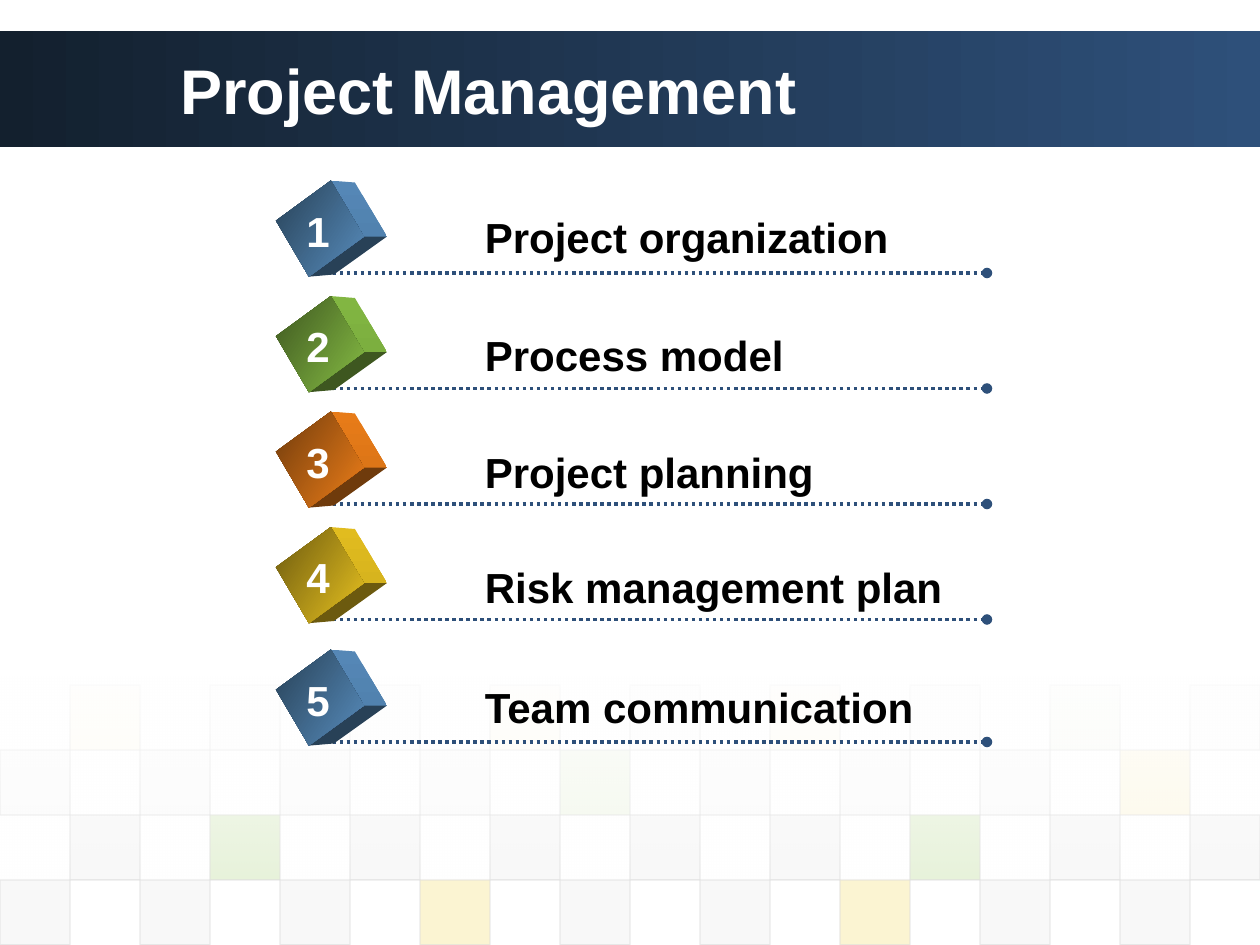
from lxml import etree
from pptx import Presentation
from pptx.dml.color import RGBColor
from pptx.enum import dml, shapes, text
from pptx.oxml import ns
from pptx.util import Pt

WHITE = RGBColor(0xFF, 0xFF, 0xFF)
BLACK = RGBColor(0, 0, 0)
NAVY = RGBColor(0x2E, 0x50, 0x7A)
DEEP_NAVY = RGBColor(0x13, 0x20, 0x2E)
BLUE = RGBColor(0x5A, 0x90, 0xC2)
GREEN = RGBColor(0x8A, 0xC2, 0x46)
ORANGE = RGBColor(0xF6, 0x83, 0x1A)
YELLOW = RGBColor(0xEF, 0xC8, 0x21)
GRAY = RGBColor(0xDD, 0xDD, 0xDD)
PALE = RGBColor(0xEA, 0xEA, 0xEA)

# Label, cube colour, rule height, label top
TOPICS = [
    ("Project organization", BLUE, 156, 117.5),
    ("Process model", GREEN, 222, 185),
    ("Project planning", ORANGE, 288, 251.5),
    ("Risk management plan", YELLOW, 354, 317.5),
    ("Team communication", BLUE, 424, 386),
]

# First column, opacity in percent, tile colours in every second column
TILE_ROWS = [
    (1, 5, [YELLOW, PALE, PALE, YELLOW, GRAY, YELLOW, PALE, GREEN, PALE]),
    (0, 10, [GRAY] * 4 + [GREEN] + [GRAY] * 3 + [YELLOW]),
    (1, 20, [GRAY, GREEN] + [GRAY] * 4 + [GREEN, GRAY, GRAY]),
    (0, 20, [GRAY] * 3 + [YELLOW, GRAY, GRAY, YELLOW, GRAY, GRAY]),
]
TILE_W, TILE_H, TILES_TOP = 40, 37.1, 391.5

# Cube corners, measured from the cube's upper left
LEFT, TOP, TOP_BACK = (0, 22.9), (31.4, 0), (45.1, 1.1)
CENTER, RIGHT = (50.3, 32), (63.4, 32)
BOTTOM, BOTTOM_BACK = (18.9, 54.9), (33.1, 53.7)
CUBE_LEFT, CUBE_RISE = 157.7, 52.8


def shade(color, factor):
    return RGBColor(*(round(part * factor) for part in color))


def set_opacity(holder, *percents):
    """Give the RGB colours inside an XML element their opacities, in order."""
    for color, percent in zip(holder.iter(ns.qn("a:srgbClr")), percents):
        alpha = etree.SubElement(color, ns.qn("a:alpha"))
        alpha.set("val", str(percent * 1000))


def fill_gradient(shape, start, end, angle):
    """Fill from start to end; the angle runs counter-clockwise."""
    shape.fill.gradient()
    shape.fill.gradient_angle = angle
    for stop, color, position in zip(shape.fill.gradient_stops, (start, end), (0, 1)):
        stop.color.rgb = color
        stop.position = position


def add_rect(slide, left, top, width, height):
    rect = slide.shapes.add_shape(shapes.MSO_SHAPE.RECTANGLE,
                                  Pt(left), Pt(top), Pt(width), Pt(height))
    rect.shadow.inherit = False
    rect.line.fill.background()
    return rect


def add_tile(slide, column, row, color, opacity):
    tile = add_rect(slide, column * TILE_W, TILES_TOP + row * TILE_H, TILE_W, TILE_H)
    tile.fill.solid()
    tile.fill.fore_color.rgb = color
    tile.line.color.rgb = GRAY
    tile.line.width = Pt(0.75)
    set_opacity(tile._element.spPr, opacity, 60)


def add_text(slide, words, left, top, width, height, size=24, color=BLACK,
             align=text.PP_ALIGN.LEFT, wrap=False):
    box = slide.shapes.add_textbox(Pt(left), Pt(top), Pt(width), Pt(height))
    frame = box.text_frame
    frame.word_wrap = wrap
    frame.vertical_anchor = text.MSO_ANCHOR.MIDDLE
    paragraph = frame.paragraphs[0]
    paragraph.alignment = align
    run = paragraph.add_run()
    run.text = words
    run.font.name = "Arial"
    run.font.size = Pt(size)
    run.font.bold = True
    run.font.color.rgb = color


def add_dotted_rule(slide, left, right, y):
    rule = slide.shapes.add_connector(shapes.MSO_CONNECTOR.STRAIGHT,
                                      Pt(left), Pt(y), Pt(right), Pt(y))
    rule.line.color.rgb = NAVY
    rule.line.width = Pt(2)
    rule.line.dash_style = dml.MSO_LINE.ROUND_DOT
    properties = rule._element.spPr
    end = etree.SubElement(properties.find(ns.qn("a:ln")), ns.qn("a:tailEnd"))
    end.set("type", "oval")
    etree.SubElement(properties, ns.qn("a:effectLst"))


def add_face(slide, corners, left, top):
    points = [(Pt(left + x), Pt(top + y)) for x, y in corners]
    builder = slide.shapes.build_freeform(*points[0])
    builder.add_line_segments(points[1:], close=True)
    face = builder.convert_to_shape()
    face.shadow.inherit = False
    face.line.fill.background()
    return face


def add_cube(slide, left, top, color):
    dark = shade(color, 0.45)
    side = add_face(slide, [TOP, TOP_BACK, RIGHT, CENTER], left, top)
    fill_gradient(side, shade(color, 0.94), shade(color, 0.9), 270)
    base = add_face(slide, [CENTER, RIGHT, BOTTOM_BACK, BOTTOM], left, top)
    base.fill.solid()
    base.fill.fore_color.rgb = dark
    front = add_face(slide, [LEFT, TOP, CENTER, BOTTOM], left, top)
    fill_gradient(front, dark, shade(color, 0.97), 327)


def add_topic(slide, number, label, color, rule_y, label_top):
    add_dotted_rule(slide, 186, 564, rule_y)
    add_cube(slide, CUBE_LEFT, rule_y - CUBE_RISE, color)
    add_text(slide, str(number), 167.8, rule_y - 42.2, 28, 36,
             color=WHITE, align=text.PP_ALIGN.CENTER)
    add_text(slide, label, 270, label_top, 280, 36, wrap=True)


def add_backdrop(slide):
    banner = add_rect(slide, 0, 18, 720, 66)
    fill_gradient(banner, DEEP_NAVY, NAVY, 0)
    for row, (first, opacity, colors) in enumerate(TILE_ROWS):
        for index, color in enumerate(colors):
            add_tile(slide, first + 2 * index, row, color, opacity)
    veil = add_rect(slide, 0, 386.5, 720, 116.5)
    fill_gradient(veil, WHITE, WHITE, 270)
    set_opacity(veil._element.spPr, 90, 0)


def main():
    deck = Presentation()
    deck.slide_width, deck.slide_height = Pt(720), Pt(540)
    slide = deck.slides.add_slide(deck.slide_layouts[6])
    add_backdrop(slide)
    add_text(slide, "Project Management", 96, 18, 582, 66,
             size=36, color=WHITE, wrap=True)
    for number, topic in enumerate(TOPICS, start=1):
        add_topic(slide, number, *topic)
    deck.save("out.pptx")


if __name__ == "__main__":
    main()
